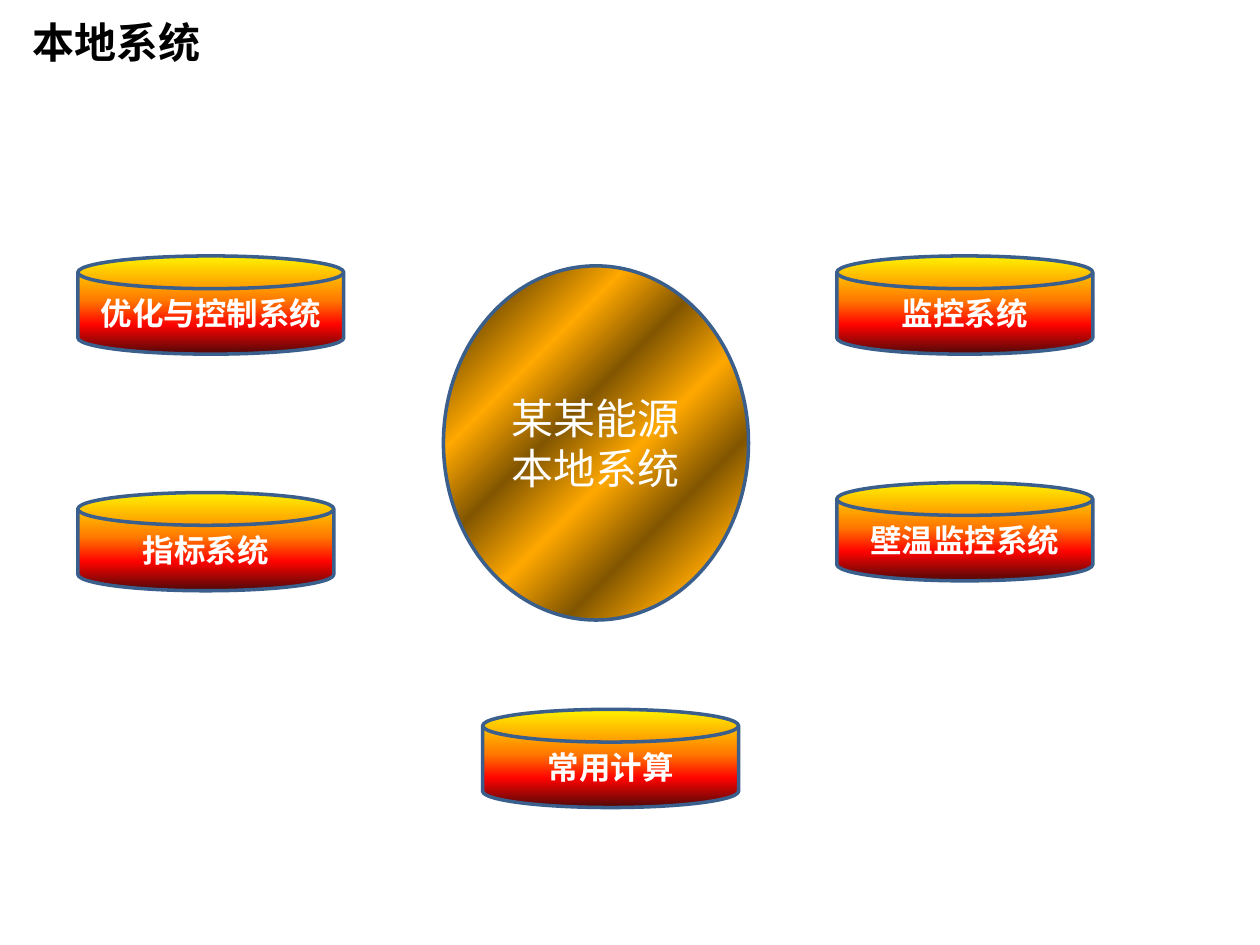
"""Build the local systems slide: a central ellipse ringed by system disks."""
from dataclasses import dataclass

from pptx import Presentation
from pptx.dml.color import RGBColor
from pptx.enum.shapes import MSO_SHAPE
from pptx.enum.text import MSO_ANCHOR, MSO_AUTO_SIZE, PP_ALIGN
from pptx.oxml.ns import qn
from pptx.oxml.xmlchemy import OxmlElement
from pptx.util import Cm, Pt


@dataclass(frozen=True)
class Theme:
    """Colours, fonts and type sizes of the slide."""
    ink: str = "000000"
    light: str = "FFFFFF"
    outline: str = "3A5F8C"
    outline_width: float = 2
    fire: tuple = ((0, "FFF200"), (45, "FF7A00"), (70, "FF0300"), (100, "4D0808"))
    bronze: str = "825600"
    gold: str = "FFA800"
    gold_positions: tuple = (0, 13, 28, 43, 58, 72, 87, 100)
    latin: str = "Calibri"
    chinese: str = "Noto Sans CJK SC"
    heading_size: int = 24
    label_size: int = 18


THEME = Theme()
LEFT_COLUMN, RIGHT_COLUMN = 1.57, 16.87
TOP_ROW = 5.16
DISK_WIDTH, DISK_HEIGHT = 5.16, 1.98
DISKS = (
    ("优化与控制系统", LEFT_COLUMN, TOP_ROW, 5.36),
    ("监控系统", RIGHT_COLUMN, TOP_ROW, DISK_WIDTH),
    ("指标系统", LEFT_COLUMN, 9.93, DISK_WIDTH),
    ("壁温监控系统", RIGHT_COLUMN, 9.73, DISK_WIDTH),
    ("常用计算", 9.73, 14.3, DISK_WIDTH),
)


def add_run(paragraph, wording, size, color, bold=False, latin=THEME.latin):
    """Append one styled run to a paragraph."""
    run = paragraph.add_run()
    run.text = wording
    run.font.size = Pt(size)
    run.font.bold = bold
    run.font.name = latin
    run.font.color.rgb = RGBColor.from_string(color)
    east_asian = OxmlElement("a:ea")
    east_asian.set("typeface", THEME.chinese)
    run.font._element.find(qn("a:latin")).addnext(east_asian)


def linear_direction():
    """Return the direction element of a top-to-bottom gradient."""
    direction = OxmlElement("a:lin")
    direction.set("ang", "5400000")
    direction.set("scaled", "0")
    return direction


def corner_direction():
    """Return the direction element of a gradient centred on the lower right corner."""
    direction = OxmlElement("a:path")
    direction.set("path", "circle")
    focus = OxmlElement("a:fillToRect")
    focus.set("l", "100000")
    focus.set("t", "100000")
    direction.append(focus)
    return direction


def fill_gradient(shape, stops, direction):
    """Fill a shape with a gradient of any number of stops."""
    gradient = OxmlElement("a:gradFill")
    gradient.set("rotWithShape", "1")
    stop_list = OxmlElement("a:gsLst")
    for position, color in stops:
        stop = OxmlElement("a:gs")
        stop.set("pos", str(position * 1000))
        swatch = OxmlElement("a:srgbClr")
        swatch.set("val", color)
        stop.append(swatch)
        stop_list.append(stop)
    gradient.append(stop_list)
    gradient.append(direction)
    shape._element.spPr.find(qn("a:prstGeom")).addnext(gradient)


def add_node(slide, preset, bounds, lines, size, bold, stops, direction):
    """Add an outlined gradient shape with centred lines of text."""
    node = slide.shapes.add_shape(preset, *(Cm(length) for length in bounds))
    node.shadow.inherit = False
    fill_gradient(node, stops, direction)
    node.line.color.rgb = RGBColor.from_string(THEME.outline)
    node.line.width = Pt(THEME.outline_width)
    frame = node.text_frame
    frame.word_wrap = True
    frame.vertical_anchor = MSO_ANCHOR.MIDDLE
    for index, wording in enumerate(lines):
        paragraph = frame.add_paragraph() if index else frame.paragraphs[0]
        paragraph.alignment = PP_ALIGN.CENTER
        add_run(paragraph, wording, size, THEME.light, bold)


def add_title(slide, wording):
    """Add the slide heading."""
    title = slide.shapes.add_textbox(Cm(0.41), Cm(0.2), Cm(9.32), Cm(1.27))
    title.text_frame.word_wrap = True
    title.text_frame.auto_size = MSO_AUTO_SIZE.SHAPE_TO_FIT_TEXT
    add_run(title.text_frame.paragraphs[0], wording, THEME.heading_size,
            THEME.ink, bold=True, latin=THEME.chinese)


def add_disk(slide, label, left, top, width):
    """Add one system as a fiery disk."""
    add_node(slide, MSO_SHAPE.FLOWCHART_MAGNETIC_DISK,
             (left, top, width, DISK_HEIGHT), [label], THEME.label_size, True,
             THEME.fire, linear_direction())


def add_hub(slide, lines):
    """Add the central ellipse with alternating bronze and gold bands."""
    bands = [(position, THEME.gold if index % 2 else THEME.bronze)
             for index, position in enumerate(THEME.gold_positions)]
    add_node(slide, MSO_SHAPE.OVAL, (8.94, 5.36, 6.15, 7.14), lines,
             THEME.heading_size, False, bands, corner_direction())


def main():
    """Build and save the slide."""
    deck = Presentation()
    deck.slide_width, deck.slide_height = Cm(25.4), Cm(19.05)
    slide = deck.slides.add_slide(deck.slide_layouts[6])
    add_title(slide, "本地系统")
    for disk in DISKS:
        add_disk(slide, *disk)
    add_hub(slide, ["某某能源", "本地系统"])
    deck.save("out.pptx")


if __name__ == "__main__":
    main()
